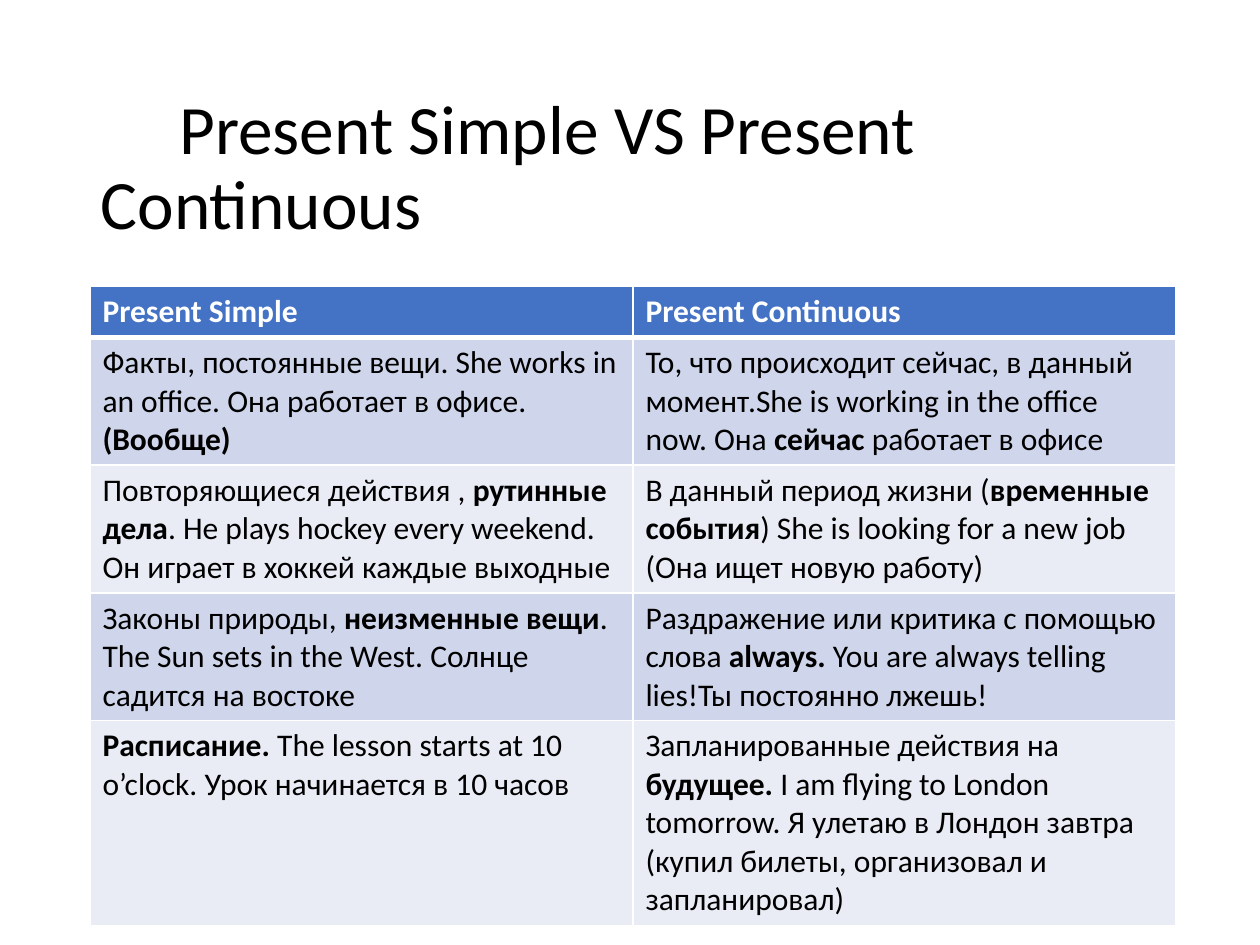
from lxml.etree import SubElement
from pptx import Presentation
from pptx.dml.color import RGBColor
from pptx.enum.text import MSO_ANCHOR as Anchor
from pptx.oxml.ns import qn
from pptx.util import Pt

WHITE = RGBColor(0xFF, 0xFF, 0xFF)
BLACK = RGBColor(0, 0, 0)
HEADER_BLUE = RGBColor(0x44, 0x72, 0xC4)
BANDS = [RGBColor(0xE9, 0xEB, 0xF5), RGBColor(0xCF, 0xD5, 0xEA)]
FONT = "Calibri"

ROWS = [
    ("**Present Simple**", "**Present Continuous**"),
    ("Факты, постоянные вещи. She works in an office. Она работает в офисе. **(Вообще)**",
     "То, что происходит сейчас, в данный момент.She is working in the office now. "
     "Она **сейчас** работает в офисе"),
    ("Повторяющиеся действия , **рутинные дела**. He plays hockey every weekend. "
     "Он играет в хоккей каждые выходные",
     "В данный период жизни (**временные события**) She is looking for a new job "
     "(Она ищет новую работу)"),
    ("Законы природы, **неизменные вещи**. The Sun sets in the West. "
     "Солнце садится на востоке",
     "Раздражение или критика с помощью слова **always.** You are always telling lies!"
     "Ты постоянно лжешь!"),
    ("**Расписание. **The lesson starts at 10 o’clock. Урок начинается в 10 часов",
     "Запланированные действия на **будущее. **I am flying to London tomorrow. "
     "Я улетаю в Лондон завтра (купил билеты, организовал и запланировал)"),
]
ROW_HEIGHTS = [29.2, 73, 73, 73, 117]


def add_marked_text(paragraph, text):
    """Add runs to the paragraph; parts between double asterisks are bold."""
    for index, part in enumerate(text.split("**")):
        if part:
            run = paragraph.add_run()
            run.text = part
            run.font.bold = index % 2 == 1


def add_borders(cell, bottom_width):
    properties = cell._tc.get_or_add_tcPr()
    for side in "LRTB":
        width = bottom_width if side == "B" else 1
        line = SubElement(properties, qn(f"a:ln{side}"), w=str(Pt(width)))
        fill = SubElement(line, qn("a:solidFill"))
        SubElement(fill, qn("a:srgbClr"), val=str(WHITE))


presentation = Presentation()
presentation.slide_width, presentation.slide_height = Pt(720), Pt(540)
slide = presentation.slides.add_slide(presentation.slide_layouts[6])

# Title
title = slide.shapes.add_textbox(Pt(50.4), Pt(60.5), Pt(620.6), Pt(72.7)).text_frame
title.word_wrap = True
title.vertical_anchor = Anchor.MIDDLE
paragraph = title.paragraphs[0]
paragraph.text = "Present Simple VS Present Continuous"
paragraph.line_spacing = 0.9
paragraph._p.get_or_add_pPr().set("indent", str(Pt(45)))
paragraph.font.name = FONT
paragraph.font.size = Pt(39.6)
paragraph.font.color.rgb = BLACK

# Comparison table
table = slide.shapes.add_table(
    len(ROWS), 2, Pt(51.4), Pt(163.6), Pt(620.6), Pt(sum(ROW_HEIGHTS))).table
for row_index, (texts, height) in enumerate(zip(ROWS, ROW_HEIGHTS)):
    is_header = row_index == 0
    table.rows[row_index].height = Pt(height)
    for column_index, text in enumerate(texts):
        cell = table.cell(row_index, column_index)
        add_borders(cell, 3 if is_header else 1)
        cell.fill.solid()
        cell.fill.fore_color.rgb = HEADER_BLUE if is_header else BANDS[row_index % 2]
        paragraph = cell.text_frame.paragraphs[0]
        add_marked_text(paragraph, text)
        for run in paragraph.runs:
            run.font.name = FONT
            run.font.size = Pt(18)
            run.font.color.rgb = WHITE if is_header else BLACK
        # The second row keeps the header's thick rule on its upper edge
        if row_index == 1:
            cell._tc.tcPr.find(qn("a:lnT")).set("w", str(Pt(3)))

presentation.save("out.pptx")
